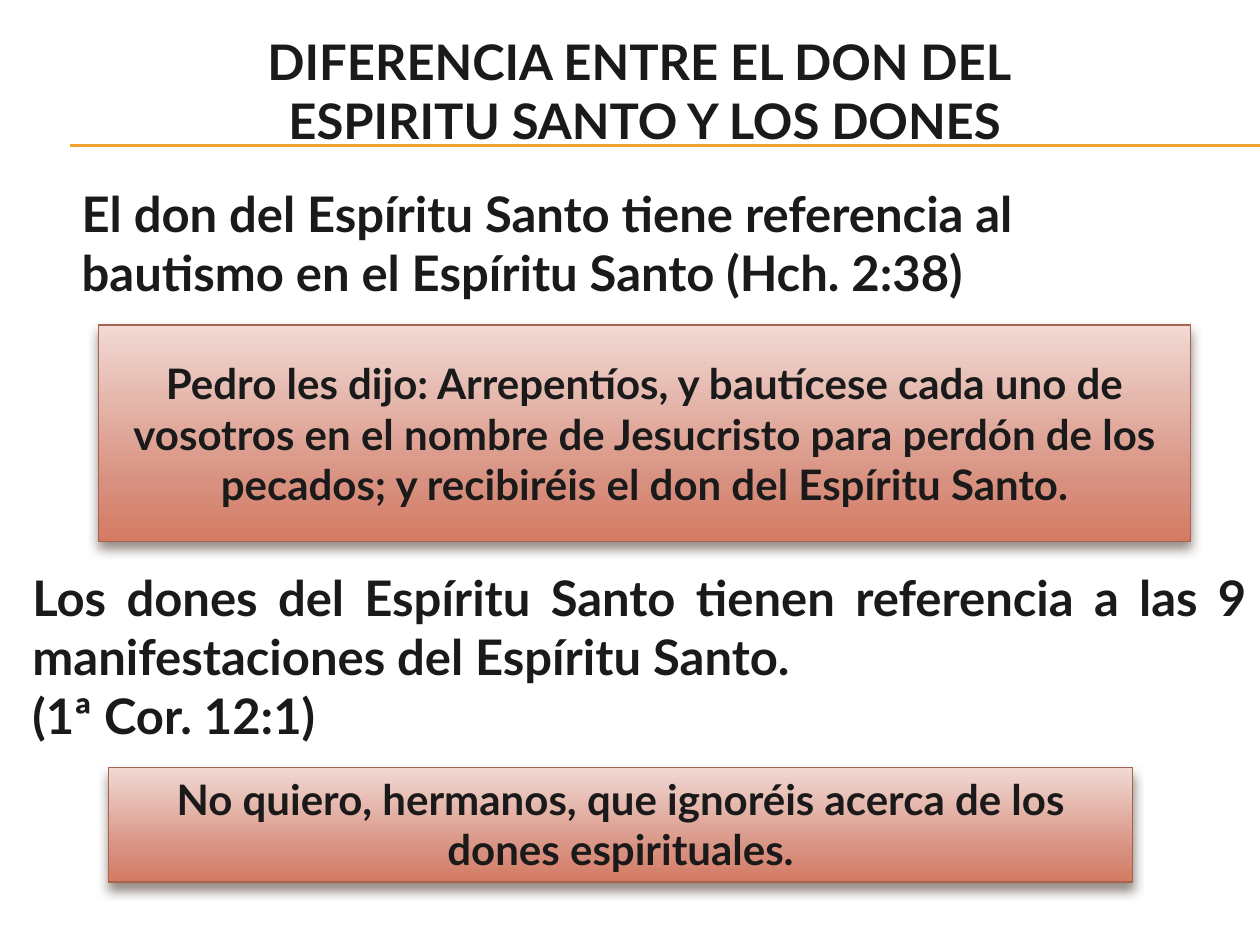
"""Build the slide on the gift and the gifts of the Holy Spirit."""
from dataclasses import dataclass

from lxml import etree
from pptx import Presentation
from pptx.dml.color import RGBColor
from pptx.enum import shapes, text
from pptx.oxml.ns import qn
from pptx.util import Pt


@dataclass(frozen=True)
class Theme:
    font: str = "Lato"
    ink: str = "1A1A1A"
    rule: str = "F0A22E"
    edge: str = "A5644E"
    shade: str = "4E3B30"
    stops: tuple = ((0, "F1D9D4"), (72, "D89180"), (100, "D47A62"))
    head: int = 28
    verse: int = 24


THEME = Theme()
SIZE = (720, 540)
RULES = (82.8, 83.5)
RULE_LEFT = 40.3

ALIGN = text.PP_ALIGN
ANCHOR = text.MSO_ANCHOR
TITLE = (
    (50.4, 14.4, 635.8, 74.9), ALIGN.CENTER, ANCHOR.MIDDLE,
    ["DIFERENCIA ENTRE EL DON DEL ", "ESPIRITU SANTO Y LOS DONES"],
)
POINTS = [
    ((39.6, 101.5, 641.5, 74.9), ALIGN.LEFT, ANCHOR.TOP,
     ["El don del Espíritu Santo tiene referencia al bautismo en el "
      "Espíritu Santo (Hch. 2:38)"]),
    ((11.5, 320.4, 707.8, 108.7), ALIGN.JUSTIFY, ANCHOR.MIDDLE,
     ["Los dones del Espíritu Santo tienen referencia a las 9 "
      "manifestaciones del Espíritu Santo.",
      "(1ª Cor. 12:1)"]),
]
VERSES = [
    ((56.2, 185.8, 624.2, 123.8), ALIGN.CENTER, ANCHOR.MIDDLE,
     ["Pedro les dijo: Arrepentíos, y bautícese cada uno de vosotros en el "
      "nombre de Jesucristo para perdón de los pecados; y recibiréis el don "
      "del Espíritu Santo."]),
    ((61.9, 438.5, 585.4, 65.5), ALIGN.CENTER, ANCHOR.TOP,
     ["No quiero, hermanos, que ignoréis acerca de los dones espirituales."]),
]


def rgb(code):
    return RGBColor.from_string(code)


def node(parent, tag, **attrs):
    return etree.SubElement(
        parent, qn(tag), {key: str(val) for key, val in attrs.items()})


def write(shape, item, size):
    box, align, anchor, lines = item
    shape.left, shape.top, shape.width, shape.height = map(Pt, box)
    frame = shape.text_frame
    frame.text = "\n".join(lines)
    frame.word_wrap = True
    frame.auto_size = text.MSO_AUTO_SIZE.SHAPE_TO_FIT_TEXT
    frame.vertical_anchor = anchor
    for para in frame.paragraphs:
        para.alignment = align
        for run in para.runs:
            font = run.font
            font.name, font.size, font.bold = THEME.font, Pt(size), True
            font.color.rgb = rgb(THEME.ink)


def rule(slide, top):
    line = slide.shapes.add_connector(
        shapes.MSO_CONNECTOR.STRAIGHT,
        Pt(RULE_LEFT), Pt(top), Pt(SIZE[0]), Pt(top))
    line.line.color.rgb = rgb(THEME.rule)
    line.line.width = Pt(0.75)
    node(line._element.spPr, "a:effectLst")


def panel(slide, item):
    shape = slide.shapes.add_shape(
        shapes.MSO_SHAPE.RECTANGLE, *map(Pt, item[0]))
    shape.line.color.rgb = rgb(THEME.edge)
    shape.line.width = Pt(0.79)
    shape.fill.gradient()
    shape.fill.gradient_angle = 270
    props = shape._element.spPr
    stops = props.find(".//" + qn("a:gsLst"))
    stops.clear()
    for pos, code in THEME.stops:
        node(node(stops, "a:gs", pos=pos * 1000), "a:srgbClr", val=code)
    shape.shadow.inherit = False
    glow = node(props.find(qn("a:effectLst")), "a:outerShdw",
                blurRad=Pt(6), dist=Pt(4), dir=90 * 60000, rotWithShape=0)
    node(node(glow, "a:srgbClr", val=THEME.shade), "a:alpha", val=60000)
    write(shape, item, THEME.verse)


def main():
    deck = Presentation()
    deck.slide_width, deck.slide_height = map(Pt, SIZE)
    slide = deck.slides.add_slide(deck.slide_layouts[5])
    for top in RULES:
        rule(slide, top)
    title = slide.shapes.title
    write(title, TITLE, THEME.head)
    slide.shapes._spTree.append(title._element)
    for point, verse in zip(POINTS, VERSES):
        note = slide.shapes.add_textbox(*map(Pt, point[0]))
        write(note, point, THEME.head)
        panel(slide, verse)
    deck.save("out.pptx")


if __name__ == "__main__":
    main()
